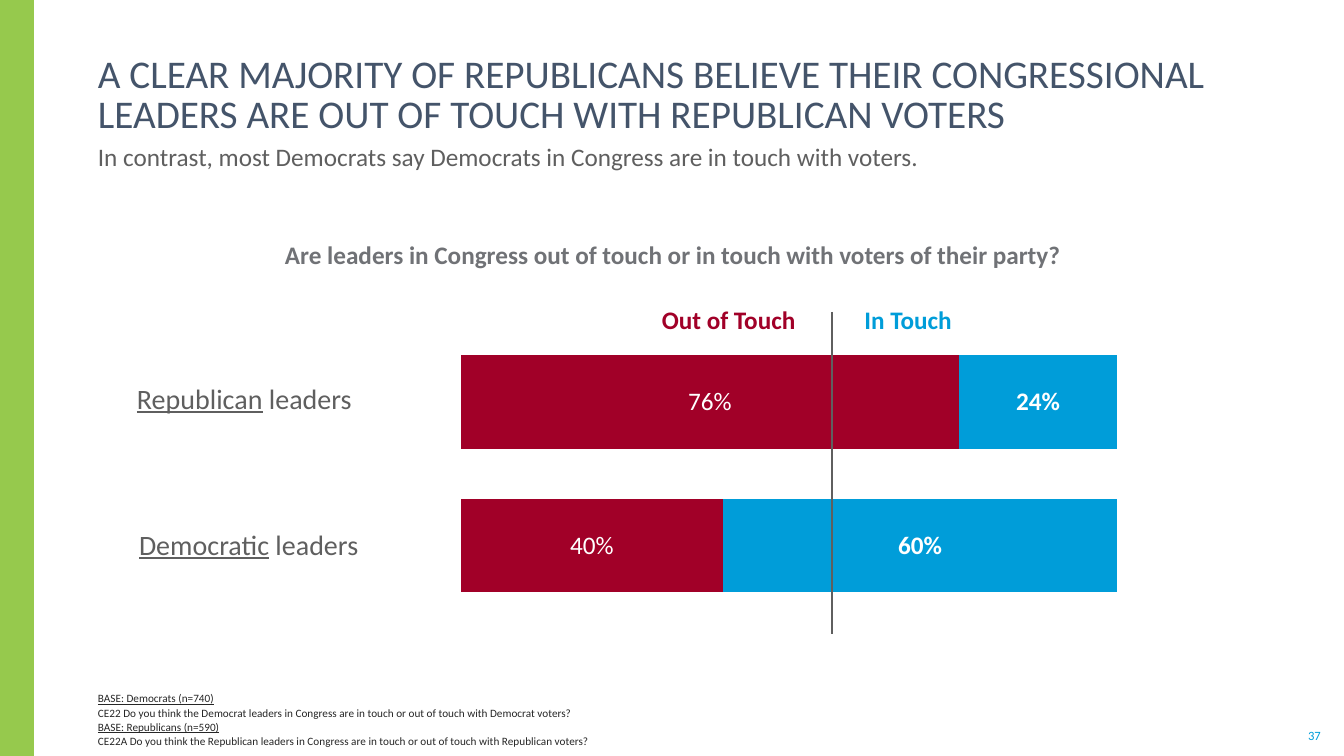
from lxml import etree
from pptx import Presentation
from pptx.chart.data import CategoryChartData
from pptx.dml.color import RGBColor
from pptx.enum.chart import XL_CHART_TYPE as CHART, XL_LABEL_POSITION as LABEL_POS
from pptx.enum.shapes import MSO_CONNECTOR as CONNECTOR, MSO_SHAPE as SHAPE
from pptx.enum.text import MSO_ANCHOR as ANCHOR, PP_ALIGN as ALIGN
from pptx.oxml.ns import qn
from pptx.util import Emu, Pt

GREEN = RGBColor(0x96, 0xC9, 0x4D)
RED = RGBColor(0xA1, 0x00, 0x28)
BLUE = RGBColor(0x00, 0x9D, 0xD9)
NAVY = RGBColor(0x44, 0x54, 0x6A)
GRAY = RGBColor(0x5F, 0x5F, 0x5F)
QUESTION_GRAY = RGBColor(0x70, 0x72, 0x76)
INK = RGBColor(0x26, 0x26, 0x26)
WHITE = RGBColor(0xFF, 0xFF, 0xFF)


def px(*lengths):
    return [Emu(round(length * 914400 / 100.8)) for length in lengths]


class Deck:
    font = "Calibri"

    def __init__(self):
        self.prs = Presentation()
        self.prs.slide_width, self.prs.slide_height = px(1344, 756)
        self.slide = self.prs.slides.add_slide(self.prs.slide_layouts[6])
        self.shapes = self.slide.shapes

    def style(self, font, size, color, bold=False):
        font.name, font.size, font.bold = self.font, Pt(size), bold
        font.color.rgb = color

    def shape(self, kind, box, fill=None):
        shape = self.shapes.add_shape(kind, *px(*box))
        shape.shadow.inherit = False
        shape.line.fill.background()
        if fill is None:
            shape.fill.background()
        else:
            shape.fill.solid()
            shape.fill.fore_color.rgb = fill
        return shape

    def text(self, box, lines, size, color, bold=False, align=ALIGN.LEFT,
             anchor=ANCHOR.TOP, insets=(10, 5), wrap=True, spacing=None,
             gap=0, kind=None):
        """Each line is a list of (words, underlined) runs."""
        holder = self.shape(kind, box) if kind else self.shapes.add_textbox(*px(*box))
        frame = holder.text_frame
        frame.word_wrap, frame.vertical_anchor = wrap, anchor
        frame.margin_left, frame.margin_top = px(*insets)
        frame.margin_right, frame.margin_bottom = px(*insets)
        for i, runs in enumerate(lines):
            para = frame.add_paragraph() if i else frame.paragraphs[0]
            para.alignment = align
            if spacing:
                para.line_spacing = spacing
            if i and gap:
                para.space_before = Pt(gap)
            self.style(para.font, size, color, bold)
            for words, underlined in runs:
                run = para.add_run()
                run.text = words
                if underlined:
                    run.font.underline = True

    def line(self, start, end, color, width):
        line = self.shapes.add_connector(CONNECTOR.STRAIGHT, *px(*start, *end))
        line.line.color.rgb, line.line.width = color, Pt(width)
        etree.SubElement(line._element.spPr, qn("a:effectLst"))

    def stacked_bars(self, box, categories, series, plot_area):
        """Each series is (name, values, color, bold labels)."""
        data = CategoryChartData(number_format="0%")
        data.categories = categories
        for name, values, _, _ in series:
            data.add_series(name, values)
        chart = self.shapes.add_chart(CHART.BAR_STACKED_100, *px(*box), data).chart
        self.style(chart.font, 10, GRAY)
        chart.has_legend = chart.has_title = False
        chart.category_axis.reverse_order = True
        for axis in (chart.category_axis, chart.value_axis):
            axis.has_major_gridlines = False
            axis.visible = False
        plot = chart.plots[0]
        plot.gap_width, plot.overlap, plot.vary_by_categories = 53, 100, False
        for bars, (_, _, color, bold) in zip(plot.series, series):
            bars.invert_if_negative = False
            bars.format.fill.solid()
            bars.format.fill.fore_color.rgb = color
            labels = bars.data_labels
            labels.show_value, labels.position = True, LABEL_POS.CENTER
            labels.number_format, labels.number_format_is_linked = "0%;0%", False
            self.style(labels.font, 18, WHITE, bold)
        self.place_plot(chart, plot_area)

    def place_plot(self, chart, fractions):
        area = chart._chartSpace.chart.plotArea
        for old in area.findall(qn("c:layout")):
            area.remove(old)
        layout = etree.Element(qn("c:layout"))
        area.insert(0, layout)
        manual = etree.SubElement(layout, qn("c:manualLayout"))
        settings = [("layoutTarget", "inner"), ("xMode", "edge"), ("yMode", "edge")]
        settings += zip("xywh", fractions)
        for tag, value in settings:
            etree.SubElement(manual, qn(f"c:{tag}")).set("val", str(value))


def main():
    deck = Deck()

    # Side band and page number
    deck.shape(SHAPE.RECTANGLE, (0, 0, 34, 756), GREEN)
    deck.text((1307, 728, 15, 15), [[("37", False)]], 9, BLUE, align=ALIGN.CENTER,
              anchor=ANCHOR.MIDDLE, insets=(0, 0), wrap=False)

    # Title and subtitle
    deck.text((88, 75, 1156, 62),
              [[("A CLEAR MAJORITY OF REPUBLICANS BELIEVE THEIR CONGRESSIONAL "
                 "LEADERS ARE OUT OF TOUCH WITH REPUBLICAN VOTERS", False)]],
              28, NAVY, anchor=ANCHOR.BOTTOM, insets=(10, 0), spacing=0.85)
    deck.text((88, 141, 1200, 34),
              [[("In contrast, most Democrats say Democrats in Congress "
                 "are in touch with voters.", False)]],
              18, GRAY, insets=(10, 0))

    # Question, bars and midline
    deck.text((127, 234, 1092, 40),
              [[("Are leaders in Congress out of touch or in touch "
                 "with voters of their party?", False)]],
              18, QUESTION_GRAY, bold=True, align=ALIGN.CENTER)
    deck.stacked_bars((41, 288, 1076, 383), ["1", "2"],
                      [("Series 1", (-0.76, -0.4), RED, False),
                       ("Series 2", (0.24, 0.6), BLUE, True)],
                      (0.39, 0.11, 0.61, 0.75))
    deck.line((832, 312), (832, 634), GRAY, 0.85)

    # Answer headings on either side of the midline
    for left, answer, color, align in ((537, "Out of Touch", RED, ALIGN.RIGHT),
                                       (849, "In Touch", BLUE, ALIGN.LEFT)):
        deck.text((left, 263, 274, 112), [[(answer, False)]], 18, color, bold=True,
                  align=align, anchor=ANCHOR.MIDDLE, kind=SHAPE.ROUNDED_RECTANGLE)

    # Row labels
    for left, top, party in ((127, 376, "Republican"), (129, 522, "Democratic")):
        deck.text((left, top, 420, 44), [[(party, True), (" leaders", False)]], 20, GRAY)

    # Survey bases and question wording
    deck.text((88, 708, 1200, 40),
              [[("BASE: Democrats (n=740)", True)],
               [("CE22 Do you think the Democrat leaders in Congress are in touch "
                 "or out of touch with Democrat voters?", False)],
               [("BASE: Republicans (n=590)", True)],
               [("CE22A Do you think the Republican leaders in Congress are in touch "
                 "or out of touch with Republican voters?", False)]],
              8, INK, anchor=ANCHOR.BOTTOM, insets=(10, 0), gap=0.6)

    deck.prs.save("out.pptx")


if __name__ == "__main__":
    main()
